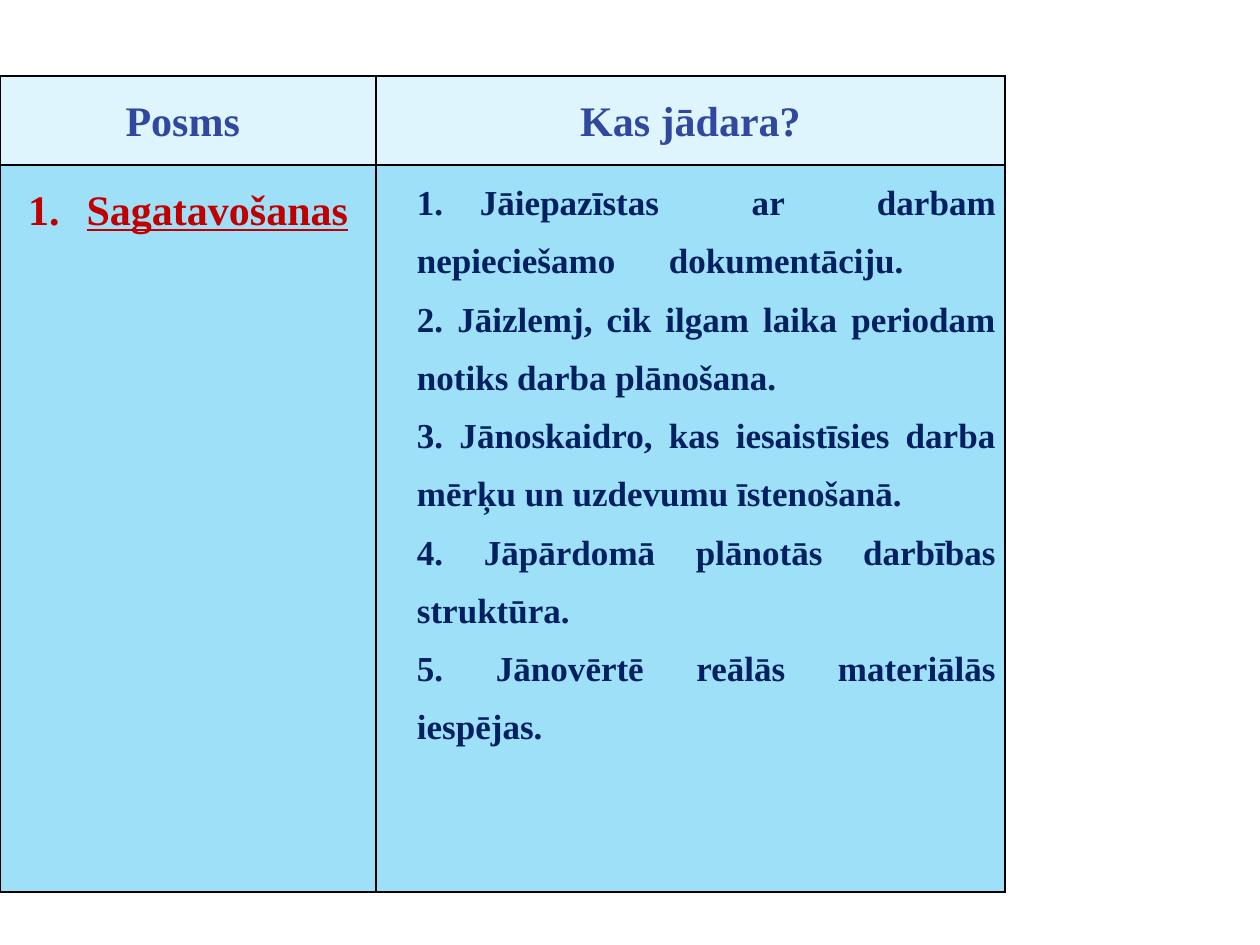
from dataclasses import dataclass

from lxml.etree import SubElement
from pptx import Presentation
from pptx.dml.color import RGBColor as Rgb
from pptx.enum.text import PP_ALIGN as Align
from pptx.oxml.ns import qn
from pptx.util import Pt

EMU_PER_PX = 914400 // 126


@dataclass(frozen=True)
class Theme:
    font: str = "Times New Roman"
    heading_size: int = 24
    task_size: int = 20
    heading: str = "31489F"
    stage: str = "C00000"
    task: str = "002060"
    header_fill: str = "DFF5FD"
    body_fill: str = "9EE0F8"
    border: str = "000000"
    border_width: int = 1


THEME = Theme()
HEADINGS = ("Posms ", "Kas jādara?")
COLUMN_WIDTHS = (376, 629)
ROW_HEIGHTS = (89, 727)
TASK_TABS = (169, 266)
TASKS = (
    "1.\tJāiepazīstas ar darbam nepieciešamo\tdokumentāciju.",
    "2. Jāizlemj, cik ilgam laika periodam notiks darba plānošana.",
    "3. Jānoskaidro, kas iesaistīsies darba mērķu un uzdevumu īstenošanā.",
    "4. Jāpārdomā plānotās darbības struktūra.",
    "5. Jānovērtē reālās materiālās iespējas.",
)


def px(length):
    return length * EMU_PER_PX


def add_run(paragraph, text, size, color, underline=False):
    run = paragraph.add_run()
    run.text = text
    font = run.font
    font.name, font.size, font.bold = THEME.font, Pt(size), True
    font.color.rgb = Rgb.from_string(color)
    font.underline = underline


def format_paragraph(paragraph, align, margin=0, indent=0):
    paragraph.alignment = align
    paragraph.line_spacing = 1.5
    properties = paragraph._p.get_or_add_pPr()
    properties.set("marL", str(px(margin)))
    properties.set("indent", str(px(indent)))
    return properties


def add_tab_stops(properties, positions):
    stops = SubElement(properties, qn("a:tabLst"))
    for position in positions:
        SubElement(stops, qn("a:tab"), pos=str(px(position)), algn="l")


def style_cell(cell, fill):
    cell.margin_left = cell.margin_right = px(9)
    cell.margin_top = cell.margin_bottom = 0
    properties = cell._tc.get_or_add_tcPr()
    for side in ("lnL", "lnR", "lnT", "lnB"):
        line = SubElement(properties, qn(f"a:{side}"), w=str(Pt(THEME.border_width)))
        line_fill = SubElement(line, qn("a:solidFill"))
        SubElement(line_fill, qn("a:srgbClr"), val=THEME.border)
    cell.fill.solid()
    cell.fill.fore_color.rgb = Rgb.from_string(fill)


def add_stage_table(slide):
    table = slide.shapes.add_table(
        len(ROW_HEIGHTS), len(COLUMN_WIDTHS), 0, px(76),
        px(sum(COLUMN_WIDTHS)), px(sum(ROW_HEIGHTS)),
    ).table
    for column, width in zip(table.columns, COLUMN_WIDTHS):
        column.width = px(width)
    for row, height, fill in zip(
        table.rows, ROW_HEIGHTS, (THEME.header_fill, THEME.body_fill)
    ):
        row.height = px(height)
        for cell in row.cells:
            style_cell(cell, fill)
    return table


def fill_heading(cell, text):
    paragraph = cell.text_frame.paragraphs[0]
    format_paragraph(paragraph, Align.CENTER)
    add_run(paragraph, text, THEME.heading_size, THEME.heading)


def fill_stage(cell):
    paragraph = cell.text_frame.paragraphs[0]
    properties = format_paragraph(paragraph, Align.CENTER, margin=48, indent=-48)
    SubElement(properties, qn("a:buFont"), typeface=THEME.font)
    SubElement(properties, qn("a:buAutoNum"), type="arabicPeriod")
    add_run(paragraph, " ", THEME.heading_size, THEME.stage)
    add_run(paragraph, "Sagatavošanas", THEME.heading_size, THEME.stage, underline=True)


def fill_tasks(cell):
    frame = cell.text_frame
    for index, task in enumerate(TASKS):
        paragraph = frame.add_paragraph() if index else frame.paragraphs[0]
        properties = format_paragraph(paragraph, Align.JUSTIFY, margin=32)
        if "\t" in task:
            add_tab_stops(properties, TASK_TABS)
        add_run(paragraph, task, THEME.task_size, THEME.task)


def main():
    deck = Presentation()
    deck.slide_width, deck.slide_height = px(1260), px(945)
    slide = deck.slides.add_slide(deck.slide_layouts[6])
    table = add_stage_table(slide)
    for column, heading in enumerate(HEADINGS):
        fill_heading(table.cell(0, column), heading)
    fill_stage(table.cell(1, 0))
    fill_tasks(table.cell(1, 1))
    deck.save("out.pptx")


if __name__ == "__main__":
    main()
